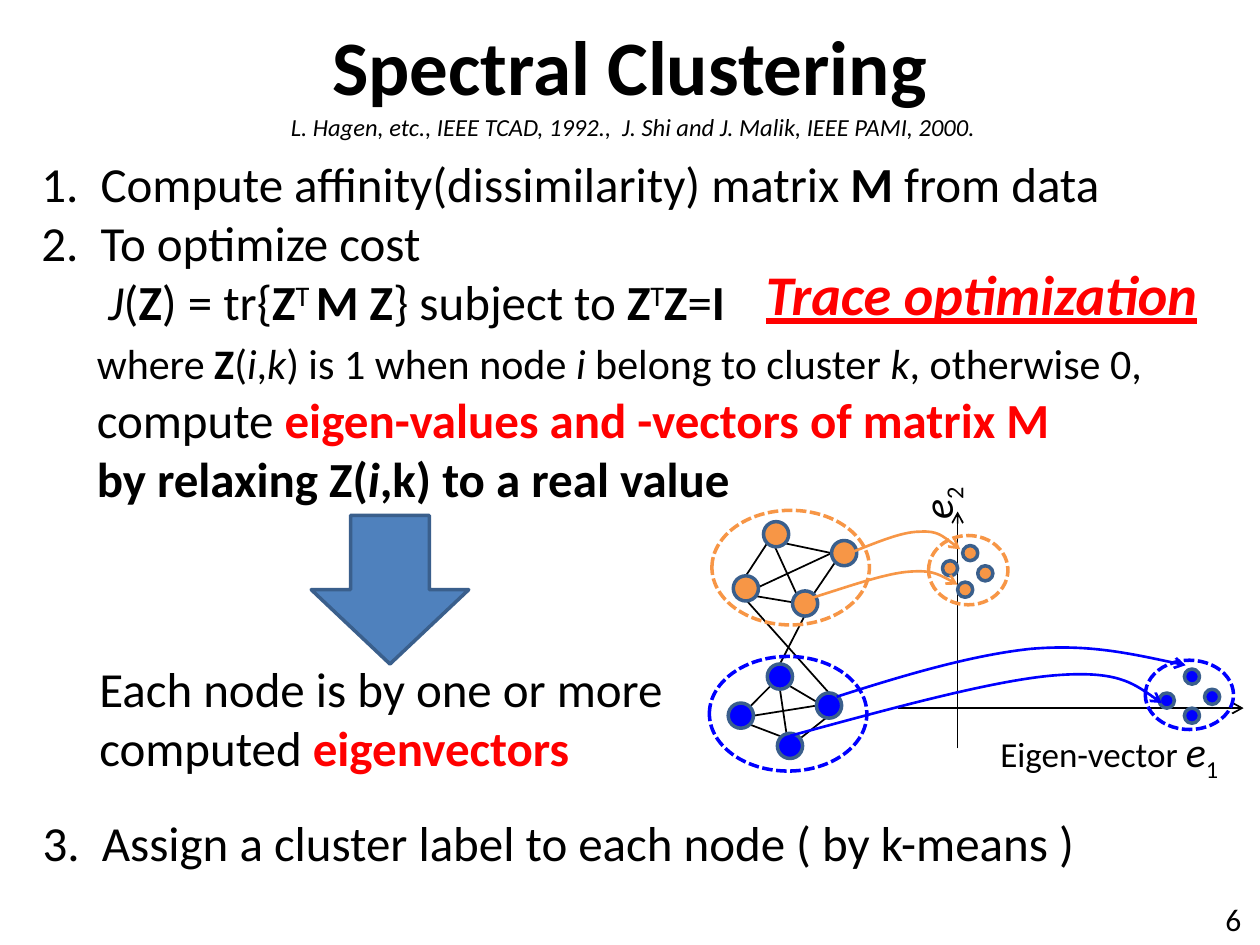
import lxml.etree
import pptx
import pptx.dml.color
import pptx.enum.dml
import pptx.enum.shapes
import pptx.enum.text
import pptx.oxml.ns
import pptx.util

BLACK, RED, ORANGE, BLUE = "000000", "FF0000", "F79646", "0000FF"
STEEL, OUTLINE = "4F81BD", "3A5F8C"
FONT = "Calibri"
LEFT = pptx.enum.text.PP_ALIGN.LEFT
RIGHT = pptx.enum.text.PP_ALIGN.RIGHT
qn = pptx.oxml.ns.qn

presentation = pptx.Presentation()
presentation.slide_width = pptx.util.Inches(10)
presentation.slide_height = pptx.util.Inches(7.5)
slide = presentation.slides.add_slide(presentation.slide_layouts[5])
shapes = slide.shapes
COLUMN = presentation.slide_width / 100
ROW = presentation.slide_height / 75


def color(hex_string):
    return pptx.dml.color.RGBColor.from_string(hex_string)


def grid(*lengths):
    """Turn alternating column and row counts into slide lengths."""
    return [round(n * (ROW if i % 2 else COLUMN)) for i, n in enumerate(lengths)]


title = shapes.title
title.left, title.top, title.width, title.height = grid(0, 0, 100, 10.2)
title.text_frame.text = "Spectral Clustering"
title.text_frame.vertical_anchor = pptx.enum.text.MSO_ANCHOR.MIDDLE
title_font = title.text_frame.paragraphs[0].runs[0].font
title_font.name, title_font.size, title_font.bold = FONT, pptx.util.Pt(44), True
title_font.color.rgb = color(BLACK)

# Box, wrap, rotation, alignment, then paragraphs: indent in columns, list number,
# space before, size, runs. Run styles: b bold, i italic, u underline, r red,
# ^ superscript, _ subscript; a run may name its own size.
text_boxes = [
    ((95, 70.9, 4.5, 4), True, 0, RIGHT, [(0, None, 0, 18, [("6", "")])]),
    ((22.1, 8.4, 56.8, 3.4), False, 0, LEFT, [
        (0, None, 0, 14, [("L. Hagen, etc., IEEE TCAD, 1992.,  J. Shi and J. Malik, IEEE PAMI, 2000.", "i")])]),
    ((2.3, 11.7, 95.3, 5.7), True, 0, LEFT, [
        (4.7, 1, 0, 28, [("Compute affinity(dissimilarity) matrix ", ""), ("M", "b"), (" from data", "")])]),
    ((2.4, 64, 95.3, 5.7), True, 0, LEFT, [
        (4.7, 3, 0, 28, [("Assign a cluster label to each node ( by k-means )", "")])]),
    ((2.3, 16.4, 95.3, 15.1), True, 0, LEFT, [
        (4.7, 2, 0, 28, [("To optimize cost", "")]),
        (5.3, None, 0, 28, [
            ("J", "i"), ("(", ""), ("Z", "b"), (") = tr{", ""), ("Z", "b"), ("T ", "^"), ("M Z", "b"),
            ("} subject to ", ""), ("Z", "b"), ("T", "^"), ("Z", "b"), ("=", ""), ("I", "b")]),
        (4.4, None, 4, 24, [
            ("where ", ""), ("Z", "b"), ("(", ""), ("i", "i"), (",", ""), ("k", "i"),
            (") is 1 when node ", ""), ("i", "i"), (" belong to cluster ", ""), ("k", "i"),
            (", otherwise 0,", "")])]),
    ((2.3, 30.4, 95.3, 10.4), True, 0, LEFT, [
        (4.4, None, 0, 28, [("compute ", ""), ("eigen-values and -vectors of matrix M", "br")]),
        (4.4, None, 0, 28, [("by relaxing Z(", "b"), ("i", "bi"), (",k) to a real value", "b")])]),
    ((1.6, 51.8, 53.1, 10.4), True, 0, LEFT, [
        (5.3, None, 0, 28, [("Each node is by one or more", "")]),
        (5.3, None, 0, 28, [("computed ", ""), ("eigenvectors", "br")])]),
    ((59.8, 20.1, 36.5, 6.4), False, 0, LEFT, [(0, None, 0, 32, [("Trace optimization", "biur")])]),
    ((78.4, 57.1, 20.2, 5), False, 0, LEFT, [
        (0, None, 0, 24, [("Eigen-vector ", "", 20), ("e", "i"), ("1", "_")])]),
    ((71.9, 37.3, 4.8, 5), False, 270, LEFT, [(0, None, 0, 24, [("e", "i"), ("2", "_")])]),
]
for box, wrap, rotation, alignment, paragraphs in text_boxes:
    text_box = shapes.add_textbox(*grid(*box))
    text_box.rotation = rotation
    frame = text_box.text_frame
    frame.word_wrap = wrap
    frame.auto_size = pptx.enum.text.MSO_AUTO_SIZE.SHAPE_TO_FIT_TEXT
    for index, (indent, number, before, size, runs) in enumerate(paragraphs):
        paragraph = frame.add_paragraph() if index else frame.paragraphs[0]
        paragraph.alignment = alignment
        paragraph.space_before = pptx.util.Pt(before)
        properties = paragraph._p.get_or_add_pPr()
        margin = round(indent * COLUMN)
        properties.set("marL", str(margin))
        if number:
            properties.set("indent", str(-margin))
            lxml.etree.SubElement(properties, qn("a:buFont"), typeface="+mj-lt")
            lxml.etree.SubElement(properties, qn("a:buAutoNum"), type="arabicPeriod", startAt=str(number))
        for text, style, *own_size in runs:
            run = paragraph.add_run()
            run.text = text
            font = run.font
            font.name = FONT
            font.size = pptx.util.Pt(own_size[0] if own_size else size)
            font.bold, font.italic, font.underline = "b" in style, "i" in style, "u" in style
            font.color.rgb = color(RED if "r" in style else BLACK)
            if style in ("^", "_"):
                font._element.set("baseline", "30000" if style == "^" else "-25000")

arrows = []

# Graph edges between node rims, then the two axes
edges = [
    (61.2, 54.4, 59.5, 56.1), (61.9, 54.7, 62.7, 60.1), (62.6, 54.4, 66.5, 56.7),
    (59.5, 57.5, 63.7, 59.1), (66.8, 56, 62, 59.8), (59.8, 56.8, 64.8, 56),
    (61.5, 43.4, 63.2, 47.1), (60.2, 46.6, 66, 43.9), (62.9, 47.8, 59.9, 47.3),
    (60.9, 43.1, 59.2, 45.7), (62.2, 43.1, 66, 43.9), (66.3, 44.6, 64.6, 47.1),
    (63.9, 48.8, 61.9, 52.7), (59.2, 47.6, 65.8, 55),
]
axes = [(71.3, 56.2, 98.7, 56.2), (76, 59.4, 76, 40.6)]
for ends in edges + axes:
    line = shapes.add_connector(pptx.enum.shapes.MSO_CONNECTOR.STRAIGHT, *grid(*ends))
    line.line.color.rgb = color(BLACK)
    line.line.width = pptx.util.Pt(1)
    lxml.etree.SubElement(line._element.spPr, qn("a:effectLst"))
    if ends in axes:
        arrows.append(line)

# Node groups: fill, diameter, top-left corners
node_groups = [
    (ORANGE, 2, [(60.6, 41.4), (62.9, 46.9), (58.2, 45.7), (66, 42.9)]),
    (BLUE, 2, [(60.9, 52.7), (57.8, 55.8), (61.7, 58.2), (64.8, 55)]),
    (ORANGE, 1.2, [(76.4, 43.3), (76, 46.2), (74.8, 44.5), (77.6, 44.9)]),
    (BLUE, 1.2, [(94, 53.1), (92, 55), (94, 56.2), (95.6, 54.7)]),
]
cluster_rings = [
    (BLUE, (56.3, 52.1, 12.5, 9.1)), (ORANGE, (56.5, 40.5, 12.5, 9.1)),
    (ORANGE, (73.7, 42.5, 6.3, 5.5)), (BLUE, (90.9, 52.4, 7, 5.5)),
]
OVAL = pptx.enum.shapes.MSO_SHAPE.OVAL
DOWN_ARROW = pptx.enum.shapes.MSO_SHAPE.DOWN_ARROW
outlined = [(OVAL, (*corner, size, size), fill, OUTLINE)
            for fill, size, corners in node_groups for corner in corners]
outlined += [(OVAL, box, None, ring_color) for ring_color, box in cluster_rings]
outlined.append((DOWN_ARROW, (24.7, 40.9, 12.5, 11.8), STEEL, OUTLINE))
for kind, box, fill, outline in outlined:
    shape = shapes.add_shape(kind, *grid(*box))
    shape.shadow.inherit = False
    shape.line.color.rgb = color(outline)
    shape.line.width = pptx.util.Pt(2)
    if fill:
        shape.fill.solid()
        shape.fill.fore_color.rgb = color(fill)
    else:
        shape.fill.background()
        shape.line.dash_style = pptx.enum.dml.MSO_LINE.SQUARE_DOT

# Mappings from graph nodes to eigenvector space: a start, then Bezier points in threes
mappings = [
    (ORANGE, [(67.4, 43.9), (69.5, 43.1), (71.5, 42.2), (73, 42.2), (74.4, 42.1), (75.3, 42.9), (76.2, 43.6)]),
    (ORANGE, [(64.3, 47.5), (67.2, 46.6), (70, 45.6), (71.9, 45.4), (73.9, 45.2), (75, 45.8), (76, 46.4)]),
    (BLUE, [(66.4, 55.3), (71.7, 53.6), (77.1, 52), (81.8, 51.5), (86.4, 51.1), (90.3, 52), (94.1, 52.8)]),
    (BLUE, [(62.7, 58.4), (70.8, 56.2), (78.8, 54), (83.7, 53.6), (88.6, 53.2), (90.4, 54.5), (92.2, 55.8)]),
]
for curve_color, points in mappings:
    start, *others = [grid(*point) for point in points]
    builder = shapes.build_freeform(*start)
    builder.add_line_segments(others, close=False)
    curve = builder.convert_to_shape()
    curve.shadow.inherit = False
    curve.fill.background()
    curve.line.color.rgb = color(curve_color)
    curve.line.width = pptx.util.Pt(1.5)
    segments = list(curve._element.iter(qn("a:lnTo")))
    for first in range(0, len(segments), 3):
        bezier = lxml.etree.Element(qn("a:cubicBezTo"))
        segments[first].addprevious(bezier)
        for segment in segments[first:first + 3]:
            bezier.append(segment[0])
            segment.getparent().remove(segment)
    arrows.append(curve)

for arrow in arrows:
    lxml.etree.SubElement(arrow.line._get_or_add_ln(), qn("a:tailEnd"), type="arrow")

presentation.save("out.pptx")
